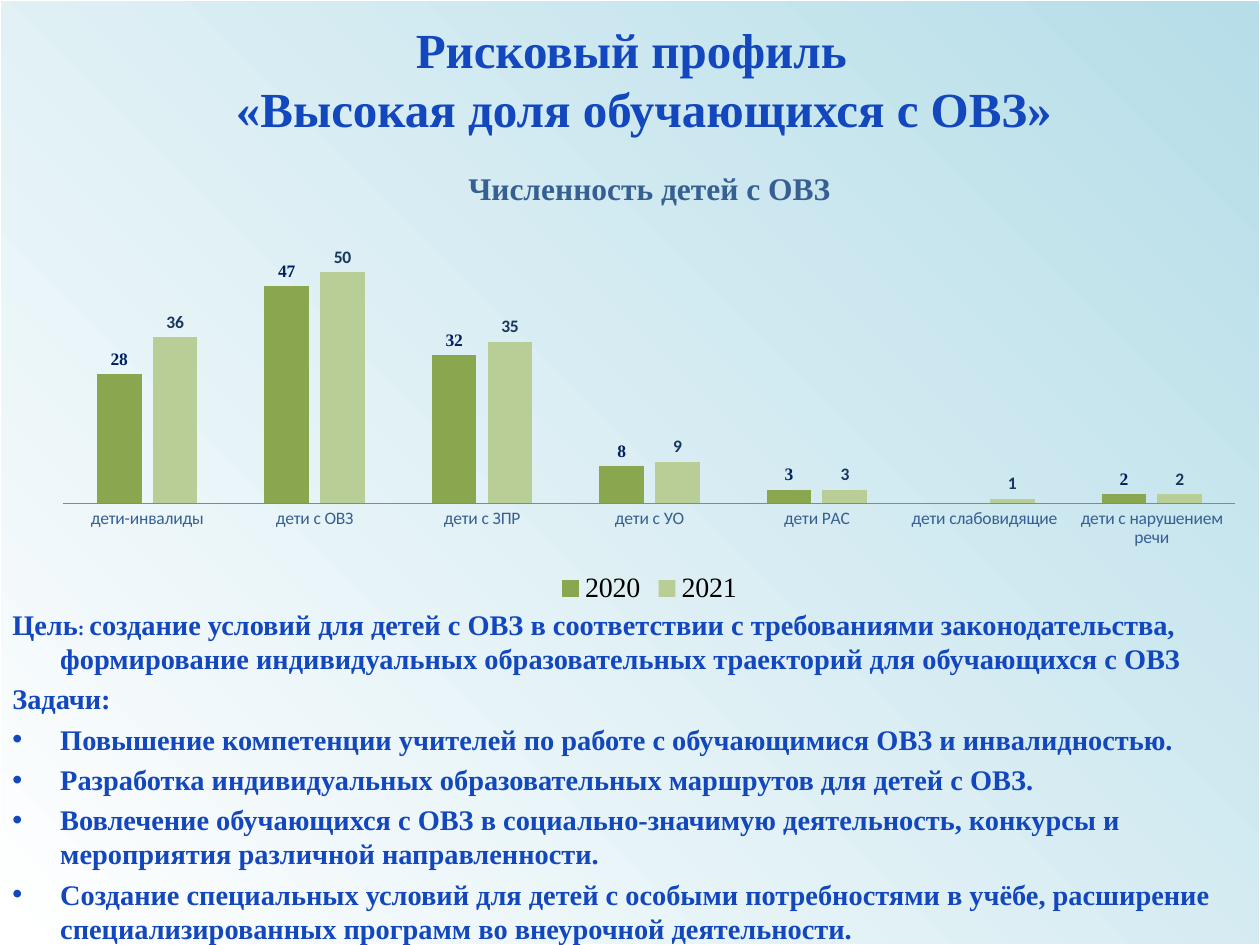
from dataclasses import dataclass
from typing import Optional

from lxml import etree
from pptx import Presentation
from pptx import util as u
from pptx.chart.data import CategoryChartData
from pptx.dml.color import RGBColor
from pptx.enum import chart as charts, shapes, text
from pptx.oxml import parse_xml
from pptx.oxml.ns import nsdecls, qn


@dataclass(frozen=True)
class Theme:
    serif: str = "Times New Roman"
    sans: str = "Calibri"
    white: str = "FFFFFF"
    sky: str = "B6DDE8"
    blue: str = "1247BE"
    axis_text: str = "376092"
    axis_line: str = "888888"
    black: str = "000000"
    title: float = 28
    body: float = 16.2
    colon: float = 11.4
    chart_title: float = 18
    legend: float = 16
    label: float = 10


@dataclass(frozen=True)
class YearSeries:
    name: str
    values: tuple[Optional[int], ...]
    fill: str
    label_color: str
    label_font: str


@dataclass(frozen=True)
class Entry:
    runs: tuple[tuple[str, float], ...]
    bullet: bool = False


THEME = Theme()
CATEGORIES = ("дети-инвалиды", "дети с ОВЗ", "дети с ЗПР", "дети с УО", "дети РАС",
              "дети слабовидящие", "дети с нарушением речи")
YEARS = (
    YearSeries("2020", (28, 47, 32, 8, 3, None, 2), "8AA64F", "002060", THEME.serif),
    YearSeries("2021", (36, 50, 35, 9, 3, 1, 2), "B9CD96", "17375E", THEME.sans),
)
# Each title line with its right margin in inches
TITLE_LINES = (("Рисковый профиль", 0.2), ("«Высокая доля обучающихся с ОВЗ»", 0))
TASKS = (
    "Повышение компетенции учителей по работе с обучающимися ОВЗ и инвалидностью.",
    "Разработка индивидуальных образовательных маршрутов для детей с ОВЗ.",
    "Вовлечение обучающихся с ОВЗ в социально-значимую деятельность, конкурсы и "
    "мероприятия различной направленности.",
    "Создание специальных условий для детей с особыми потребностями в учёбе, расширение "
    "специализированных программ во внеурочной деятельности.",
)
ENTRIES = (
    Entry((("Цель", THEME.body), (": ", THEME.colon),
           ("создание условий для детей с ОВЗ в соответствии с требованиями законодательства, "
            "формирование индивидуальных образовательных траекторий для обучающихся с ОВЗ",
            THEME.body))),
    Entry((("Задачи:", THEME.body),)),
    *(Entry(((task, THEME.body),), bullet=True) for task in TASKS),
)


def rgb(color: str) -> RGBColor:
    return RGBColor.from_string(color)


def set_font(font, name: str, size: float, color: str, bold: bool = False) -> None:
    font.name, font.size, font.bold = name, u.Pt(size), bold
    font.color.rgb = rgb(color)


def add_background(slide, width: int, height: int) -> None:
    shape = slide.shapes.add_shape(shapes.MSO_SHAPE.RECTANGLE, 0, 0, width, height)
    shape.shadow.inherit = False
    shape.fill.gradient()
    shape.fill.gradient_angle = 45
    for stop, color, position in zip(shape.fill.gradient_stops, (THEME.white, THEME.sky), (0, 1)):
        stop.color.rgb = rgb(color)
        stop.position = position
    shape.line.color.rgb = rgb(THEME.white)
    shape.line.width = u.Pt(0.75)


def add_text_frame(slide, left: float, top: float, width: float, height: float, anchor):
    box = slide.shapes.add_textbox(u.Inches(left), u.Inches(top),
                                   u.Inches(width), u.Inches(height))
    box.text_frame.word_wrap = True
    box.text_frame.vertical_anchor = anchor
    return box.text_frame


def next_paragraph(frame, index: int):
    return frame.add_paragraph() if index else frame.paragraphs[0]


def add_title(slide) -> None:
    frame = add_text_frame(slide, 0.86, 0, 8.5, 1.25, text.MSO_ANCHOR.MIDDLE)
    for index, (line, right_margin) in enumerate(TITLE_LINES):
        paragraph = next_paragraph(frame, index)
        paragraph.text = line
        paragraph.alignment = text.PP_ALIGN.CENTER
        paragraph._p.get_or_add_pPr().set("marR", str(u.Inches(right_margin)))
        set_font(paragraph.font, THEME.serif, THEME.title, THEME.blue, bold=True)


def set_plot_area(chart, x: float, y: float, width: float, height: float) -> None:
    plot_area = chart._chartSpace.chart.plotArea
    for layout in plot_area.findall(qn("c:layout")):
        plot_area.remove(layout)
    plot_area.insert(0, parse_xml(
        f'<c:layout {nsdecls("c")}><c:manualLayout><c:layoutTarget val="inner"/>'
        '<c:xMode val="edge"/><c:yMode val="edge"/>'
        f'<c:x val="{x}"/><c:y val="{y}"/><c:w val="{width}"/><c:h val="{height}"/>'
        '</c:manualLayout></c:layout>'))


def add_chart(slide) -> None:
    data = CategoryChartData()
    data.categories = CATEGORIES
    for year in YEARS:
        data.add_series(year.name, year.values)
    chart = slide.shapes.add_chart(
        charts.XL_CHART_TYPE.COLUMN_CLUSTERED, u.Inches(0.31), u.Inches(1.17),
        u.Inches(9.69), u.Inches(3.67), data).chart
    set_font(chart.font, THEME.sans, THEME.label, THEME.black)
    set_plot_area(chart, 0.02, 0.17, 0.96, 0.6)

    # Title and legend
    heading = chart.chart_title.text_frame.paragraphs[0]
    run = heading.add_run()
    run.text = "Численность детей с ОВЗ"
    set_font(run.font, THEME.serif, THEME.chart_title, THEME.axis_text, bold=True)
    chart.chart_title.include_in_layout = False
    chart.has_legend = True
    chart.legend.position = charts.XL_LEGEND_POSITION.BOTTOM
    chart.legend.include_in_layout = False
    set_font(chart.legend.font, THEME.serif, THEME.legend, THEME.black)

    # Axes
    value_axis, category_axis = chart.value_axis, chart.category_axis
    value_axis.minimum_scale, value_axis.maximum_scale = 0, 60
    value_axis.has_major_gridlines = False
    value_axis.visible = False
    category_axis.major_tick_mark = charts.XL_TICK_MARK.NONE
    category_axis.format.line.color.rgb = rgb(THEME.axis_line)
    set_font(category_axis.tick_labels.font, THEME.sans, THEME.label, THEME.axis_text)

    # Columns and their labels
    plot = chart.plots[0]
    plot.vary_by_categories = False
    plot.gap_width, plot.overlap = 150, -25
    for series, year in zip(plot.series, YEARS):
        series.format.fill.solid()
        series.format.fill.fore_color.rgb = rgb(year.fill)
        labels = series.data_labels
        labels.show_value = True
        labels.position = charts.XL_LABEL_POSITION.OUTSIDE_END
        set_font(labels.font, year.label_font, THEME.label, year.label_color, bold=True)


def format_indent(paragraph, bullet: bool) -> None:
    properties = paragraph._p.get_or_add_pPr()
    indent = u.Inches(0.38)
    properties.set("marL", str(indent))
    properties.set("indent", str(-indent))
    if bullet:
        etree.SubElement(properties, qn("a:buFont")).set("typeface", "Arial")
        etree.SubElement(properties, qn("a:buChar")).set("char", "•")
    else:
        etree.SubElement(properties, qn("a:buNone"))


def add_goals(slide) -> None:
    frame = add_text_frame(slide, 0, 4.77, 10, 2.73, text.MSO_ANCHOR.TOP)
    for index, entry in enumerate(ENTRIES):
        paragraph = next_paragraph(frame, index)
        paragraph.space_before = u.Pt(3.6)
        format_indent(paragraph, entry.bullet)
        for content, size in entry.runs:
            run = paragraph.add_run()
            run.text = content
            set_font(run.font, THEME.serif, size, THEME.blue, bold=True)


def main() -> None:
    presentation = Presentation()
    presentation.slide_width, presentation.slide_height = u.Inches(10), u.Inches(7.5)
    slide = presentation.slides.add_slide(presentation.slide_layouts[6])
    add_background(slide, presentation.slide_width, presentation.slide_height)
    add_title(slide)
    add_chart(slide)
    add_goals(slide)
    presentation.save("out.pptx")


if __name__ == "__main__":
    main()
